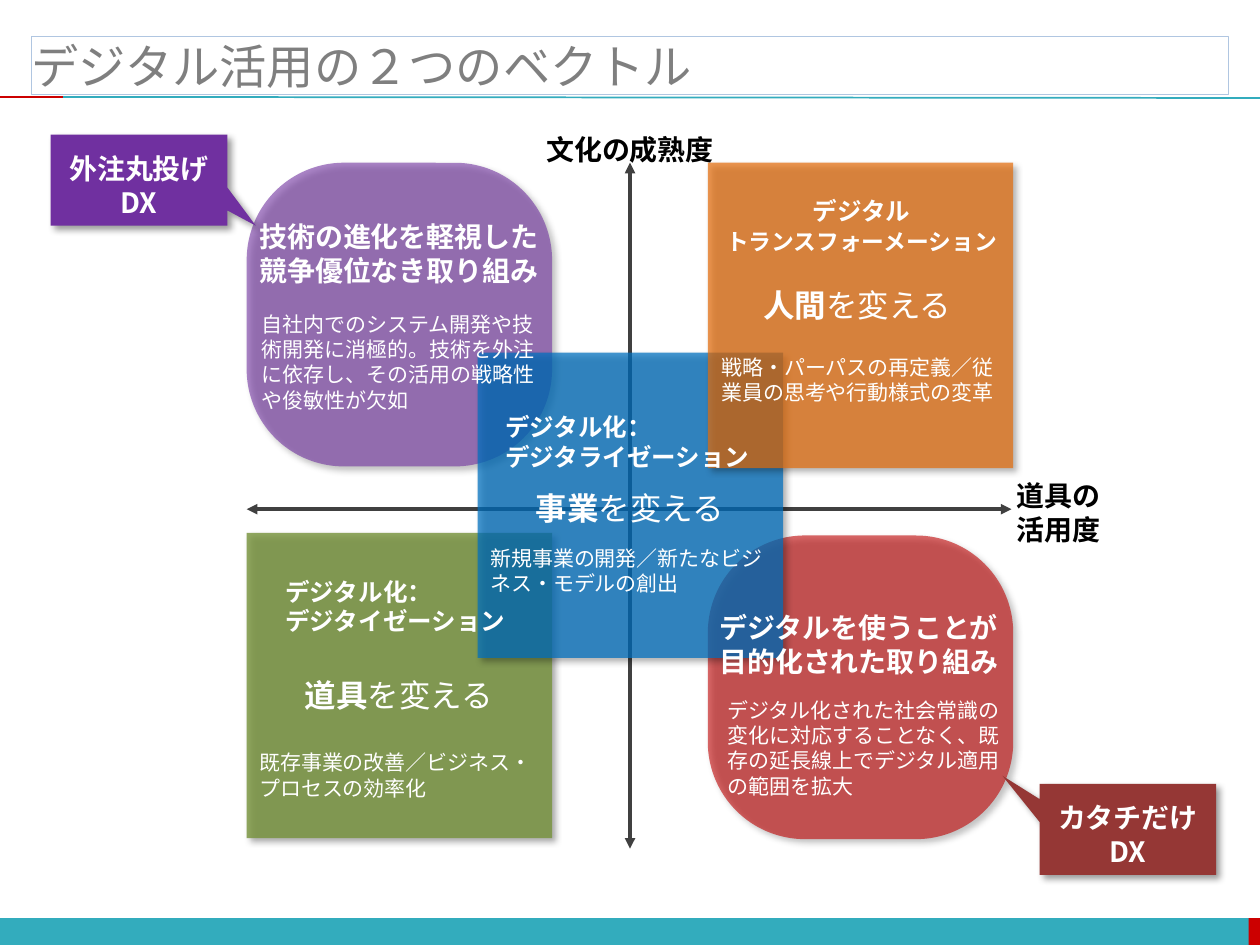
from lxml import etree
from pptx import Presentation
from pptx.dml.color import RGBColor
from pptx.enum.shapes import MSO_CONNECTOR, MSO_SHAPE as SHAPE
from pptx.enum.text import MSO_ANCHOR, PP_ALIGN as ALIGN
from pptx.oxml.ns import qn
from pptx.util import Pt

TEAL = RGBColor(0x33, 0xAC, 0xBD)
SIGNAL = RGBColor(0xCC, 0x00, 0x00)
RED = RGBColor(0xC0, 0x00, 0x00)
PURPLE = RGBColor(0x70, 0x30, 0xA0)
GREEN = RGBColor(0x77, 0x93, 0x3C)
BLUE = RGBColor(0x00, 0x70, 0xC0)
ORANGE = RGBColor(0xE4, 0x6C, 0x0A)
BROWN = RGBColor(0x95, 0x37, 0x35)
AXIS = RGBColor(0x40, 0x40, 0x40)
GRAY = RGBColor(0x7F, 0x7F, 0x7F)
PALE = RGBColor(0xB0, 0xC6, 0xE1)
WHITE = RGBColor(0xFF, 0xFF, 0xFF)
BLACK = RGBColor(0x00, 0x00, 0x00)

FONT = "Noto Sans CJK JP"
LEADING = 1.2


def add_child(parent, tag, **attrs):
    return etree.SubElement(parent, qn(tag), {k: str(v) for k, v in attrs.items()})


def write(tf, lines, size=12, bold=False, color=WHITE, align=ALIGN.LEFT):
    for i, line in enumerate(lines):
        p = tf.paragraphs[0] if i == 0 else tf.add_paragraph()
        p.alignment = align
        p.line_spacing = Pt(size * LEADING)
        runs = [(line, {})] if isinstance(line, str) else line
        for text, changes in runs:
            r = p.add_run()
            r.text = text
            r.font.name = FONT
            r.font.size = Pt(changes.get("size", size))
            r.font.bold = changes.get("bold", bold)
            r.font.color.rgb = color
            add_child(r.font._element, "a:ea", typeface=FONT)


class Canvas:
    def __init__(self, s):
        self.s = s

    def shape(self, kind, x, y, w, h, fill=None, opacity=100, adj=(), shadow=False):
        sp = self.s.shapes.add_shape(kind, Pt(x), Pt(y), Pt(w), Pt(h))
        sp.shadow.inherit = False
        sp.line.fill.background()
        for i, value in enumerate(adj):
            sp.adjustments[i] = value
        if fill is None:
            sp.fill.background()
        else:
            sp.fill.solid()
            sp.fill.fore_color.rgb = fill
            if opacity < 100:
                clr = sp._element.spPr.find(qn("a:solidFill"))[0]
                add_child(clr, "a:alpha", val=opacity * 1000)
        if shadow:
            effects = sp._element.spPr.find(qn("a:effectLst"))
            outer = add_child(effects, "a:outerShdw", blurRad=Pt(4), dist=Pt(3),
                              dir=45 * 60000, algn="tl", rotWithShape=0)
            clr = add_child(outer, "a:srgbClr", val="000000")
            add_child(clr, "a:alpha", val=40000)
        return sp

    def line(self, x1, y1, x2, y2, color, width=1, arrows=False):
        c = self.s.shapes.add_connector(
            MSO_CONNECTOR.STRAIGHT, Pt(x1), Pt(y1), Pt(x2), Pt(y2))
        c.line.color.rgb = color
        c.line.width = Pt(width)
        if arrows:
            ln = c.line._get_or_add_ln()
            add_child(ln, "a:headEnd", type="triangle")
            add_child(ln, "a:tailEnd", type="triangle")
        add_child(c._element.spPr, "a:effectLst")

    def text(self, x, y, w, h, *lines, **fmt):
        tf = self.s.shapes.add_textbox(Pt(x), Pt(y), Pt(w), Pt(h)).text_frame
        tf.word_wrap = True
        write(tf, lines, **fmt)

    def heading(self, x, y, w, *lines, size=16, align=ALIGN.CENTER, color=WHITE):
        h = len(lines) * size * LEADING + 7.2
        self.text(x, y, w, h, *lines, size=size, bold=True, align=align, color=color)

    def change(self, x, y, target):
        self.text(x, y, 124, 29, [(target, {"bold": True}), ("を変える", {})],
                  size=18, align=ALIGN.CENTER)

    def title(self, x, y, w, h, text):
        sp = self.shape(SHAPE.RECTANGLE, x, y, w, h)
        sp.line.color.rgb = PALE
        sp.line.width = Pt(0.75)
        tf = sp.text_frame
        tf.margin_left = tf.margin_right = 0
        tf.vertical_anchor = MSO_ANCHOR.MIDDLE
        tf.word_wrap = True
        write(tf, [text], size=27, color=GRAY)


def main():
    prs = Presentation()
    prs.slide_width, prs.slide_height = Pt(720), Pt(540)
    c = Canvas(prs.slides.add_slide(prs.slide_layouts[6]))

    c.shape(SHAPE.RECTANGLE, 0, 524.6, 720, 15.4, TEAL)
    c.shape(SHAPE.RECTANGLE, 713.5, 524.6, 6.5, 15.4, SIGNAL)
    c.line(36, 55.4, 720, 56, TEAL)
    c.line(0, 55.4, 36, 55.4, SIGNAL)
    c.title(18, 21, 684, 33, "デジタル活用の２つのベクトル")

    left, middle, right = 141, 273, 404.5
    top, center, bottom = 93, 201.5, 304.5
    side = 174.5
    for x, y, color, opacity in ((right, 306, RED, 59), (left, top, PURPLE, 59)):
        c.shape(SHAPE.ROUNDED_RECTANGLE, x, y, side, 173.5, color, opacity,
                adj=[0.32], shadow=True)
    c.line(360, 93, 360, 485, AXIS, 2, arrows=True)
    c.line(141, 291, 578, 291, AXIS, 2, arrows=True)
    for x, y, color, opacity in ((left, bottom, GREEN, 81),
                                 (middle, center, BLUE, 73),
                                 (right, top, ORANGE, 71)):
        c.shape(SHAPE.RECTANGLE, x, y, side, side, color, opacity, shadow=True)

    c.heading(405, 108.5, side, "デジタル",
              [("トランスフォーメーション", {"size": 13})], size=14)
    c.change(428, 160, "人間")
    c.text(405, 199, side, 36, "戦略・パーパスの再定義／従業員の思考や行動様式の変革")

    c.heading(281.5, 232, 157, "デジタル化：", "デジタライゼーション",
              size=14, align=ALIGN.LEFT)
    c.change(298, 276, "事業")
    c.text(middle, 308, side, 36, "新規事業の開発／新たなビジネス・モデルの創出")

    c.heading(156, 326, 144, "デジタル化：", "デジタイゼーション",
              size=14, align=ALIGN.LEFT)
    c.change(166, 382.5, "道具")
    c.text(left, 425, side, 36, "既存事業の改善／ビジネス・プロセスの効率化")

    c.heading(140, 122, 176, "技術の進化を軽視した", "競争優位なき取り組み")
    c.text(142.5, 174.5, 175, 65,
           "自社内でのシステム開発や技術開発に消極的。技術を外注に依存し、その活用の戦略性や俊敏性が欠如")

    c.heading(404, 345.5, 176, "デジタルを使うことが", "目的化された取り組み",
              align=ALIGN.LEFT)
    c.text(408.5, 395, 175, 65,
           "デジタル化された社会常識の変化に対応することなく、既存の延長線上でデジタル適用の範囲を拡大")

    c.heading(304, 72, 112, "文化の成熟度", color=BLACK)
    c.heading(573, 270, 64, "道具の", "活用度", color=BLACK)

    for x, y, color, adj, lines in (
            (29, 77, PURPLE, (0.66, 0.5), ("外注丸投げ", "DX")),
            (594, 448, BROWN, (-0.71, -0.59), ("カタチだけDX",))):
        c.shape(SHAPE.RECTANGULAR_CALLOUT, x, y, 101, 52, color, adj=adj, shadow=True)
        c.heading(x, y + 6, 101, *lines)

    prs.save("out.pptx")


if __name__ == "__main__":
    main()
